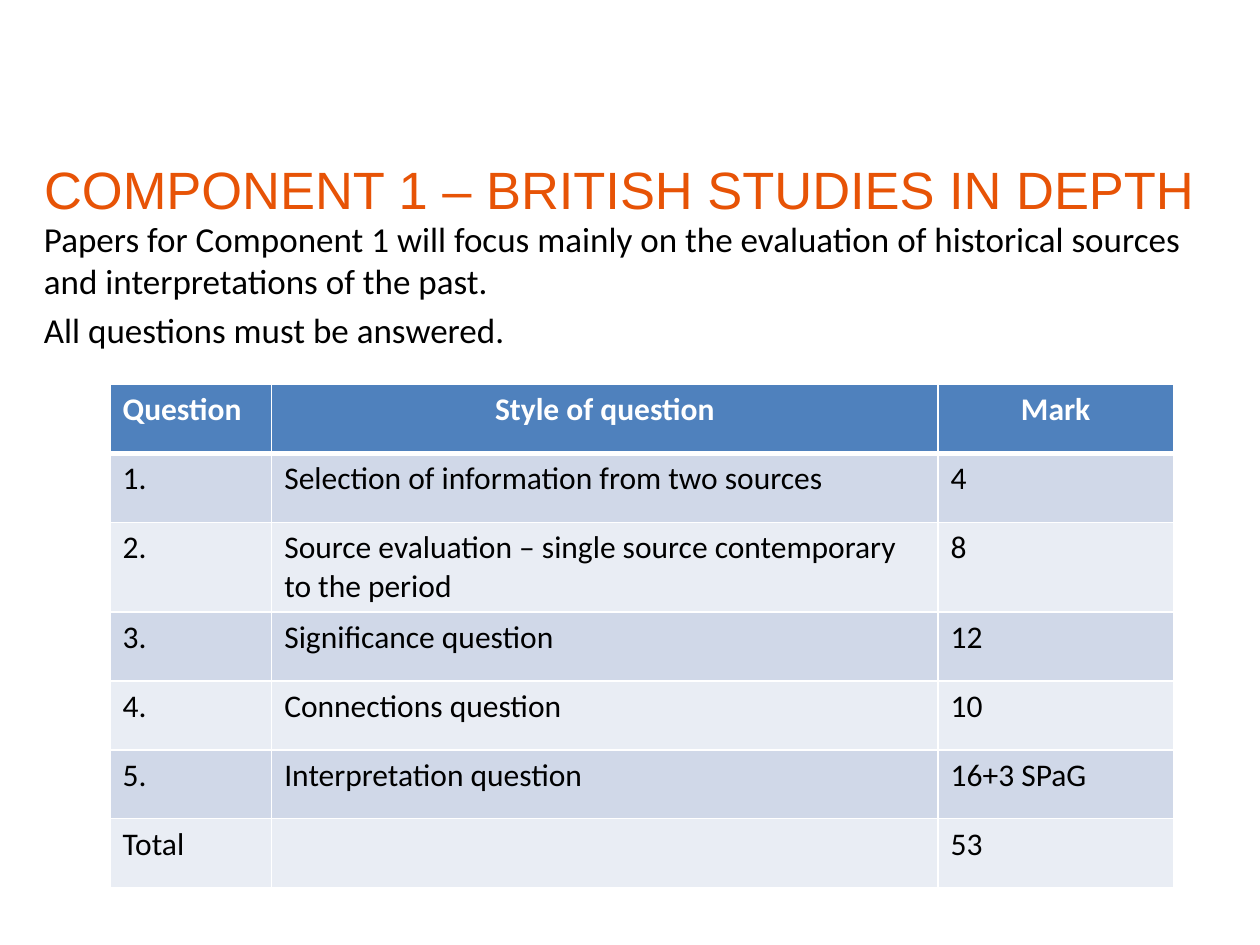
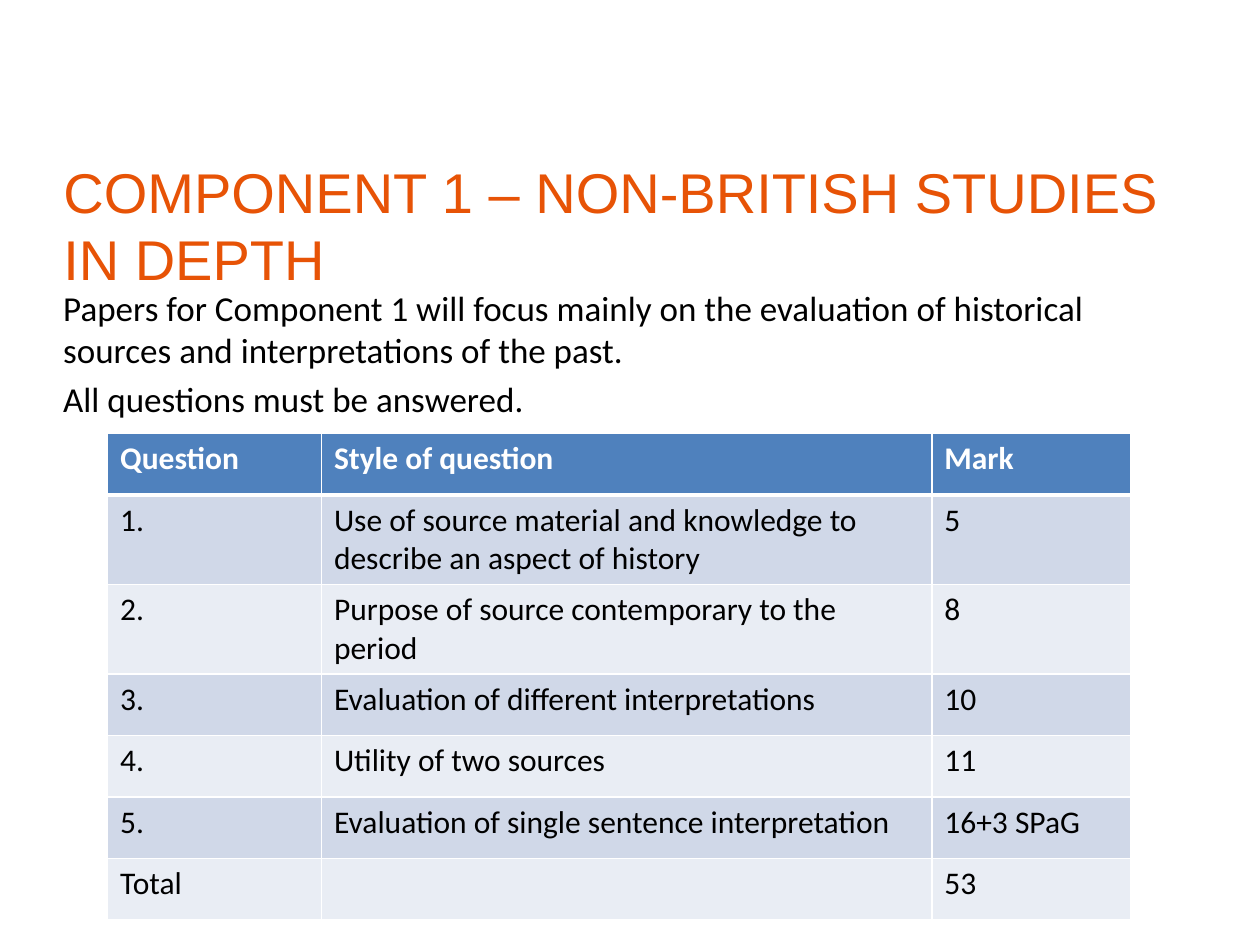
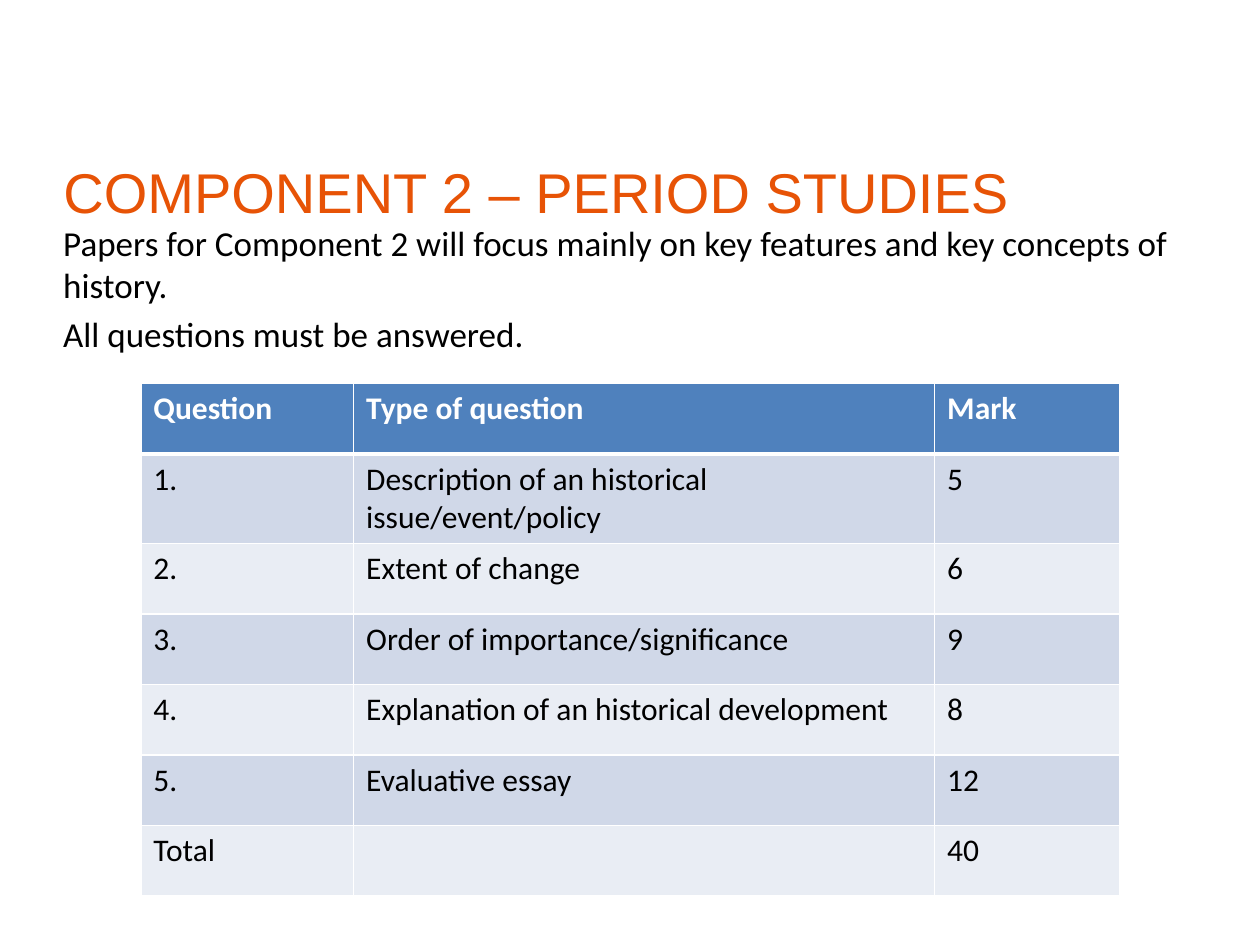
import pptx
import pptx.dml.color
import pptx.enum.text
import pptx.oxml
import pptx.oxml.ns
import pptx.util

Pt = pptx.util.Pt
ALIGN = pptx.enum.text.PP_ALIGN

COLOURS = {
    "title": "E75306",
    "text": "000000",
    "header": "4F81BD",
    "odd_row": "D0D8E8",
    "even_row": "E9EDF4",
    "white": "FFFFFF",
}
TITLE_FONT, TEXT_FONT = "Arial", "Calibri"
TITLE_TOP = 90
LINE_RATIO = 1.15
INTRO_HEIGHT = 78

# Content: wording, places and table measures of each slide
SOURCES_INTRO = [
    "Papers for Component 1 will focus mainly on the evaluation of "
    "historical sources and interpretations of the past.",
    "All questions must be answered.",
]
COMPONENTS = [
    {
        "title": "COMPONENT 1 – BRITISH STUDIES IN DEPTH",
        "title_size": 30, "title_lines": 1, "left": 18, "width": 673.2,
        "intro": SOURCES_INTRO,
        "table_at": (62.9, 219.8), "columns": (92.4, 380.8, 134.4),
        "row_height": 39.4, "header_align": (ALIGN.LEFT, ALIGN.CENTER, ALIGN.CENTER),
        "rows": [
            ("Question", "Style of question", "Mark"),
            ("1.", "Selection of information from two sources", "4"),
            ("2.", "Source evaluation – single source contemporary to the period", "8"),
            ("3.", "Significance question", "12"),
            ("4.", "Connections question", "10"),
            ("5.", "Interpretation question", "16+3 SPaG"),
            ("Total", "", "53"),
        ],
    },
    {
        "title": "COMPONENT 1 – NON-BRITISH STUDIES IN DEPTH",
        "title_size": 32, "title_lines": 2, "left": 29, "width": 663,
        "intro": SOURCES_INTRO,
        "table_at": (61.5, 247.8), "columns": (122.2, 348.8, 113.6),
        "row_height": 35.1, "header_align": (ALIGN.LEFT,) * 3,
        "rows": [
            ("Question", "Style of question", "Mark"),
            ("1.", "Use of source material and knowledge to describe an aspect of history", "5"),
            ("2.", "Purpose of source contemporary to the period", "8"),
            ("3.", "Evaluation of different interpretations", "10"),
            ("4.", "Utility of two sources", "11"),
            ("5.", "Evaluation of single sentence interpretation", "16+3 SPaG"),
            ("Total", "", "53"),
        ],
    },
    {
        "title": "COMPONENT 2 – PERIOD STUDIES",
        "title_size": 32, "title_lines": 1, "left": 29, "width": 663,
        "intro": [
            "Papers for Component 2 will focus mainly on key features and "
            "key concepts of history.",
            "All questions must be answered.",
        ],
        "table_at": (80.5, 219.2), "columns": (121.6, 332, 105.6),
        "row_height": 40.3, "header_align": (ALIGN.LEFT,) * 3,
        "rows": [
            ("Question", "Type of question", "Mark"),
            ("1.", "Description of an historical issue/event/policy", "5"),
            ("2.", "Extent of change", "6"),
            ("3.", "Order of importance/significance", "9"),
            ("4.", "Explanation of an historical development", "8"),
            ("5.", "Evaluative essay", "12"),
            ("Total", "", "40"),
        ],
    },
]


def colour(name):
    return pptx.dml.color.RGBColor.from_string(COLOURS[name])


def write(frame, *texts, size=18, font=TEXT_FONT, ink="text", bold=False,
          align=ALIGN.LEFT, gap=0):
    for index, text in enumerate(texts):
        paragraph = frame.add_paragraph() if index else frame.paragraphs[0]
        paragraph.text = text
        paragraph.alignment = align
        paragraph.space_before = Pt(gap if index else 0)
        paragraph.font.size = Pt(size)
        paragraph.font.name = font
        paragraph.font.bold = bold
        paragraph.font.color.rgb = colour(ink)


def place(shape, left, top, width, height):
    shape.left, shape.top, shape.width, shape.height = map(Pt, (left, top, width, height))
    frame = shape.text_frame
    frame.word_wrap = True
    frame.auto_size = pptx.enum.text.MSO_AUTO_SIZE.NONE
    frame.vertical_anchor = pptx.enum.text.MSO_ANCHOR.TOP
    frame.margin_top = frame.margin_bottom = 0
    return frame


def add_borders(cell, top, bottom):
    for side, width in (("L", 1), ("R", 1), ("T", top), ("B", bottom)):
        line = pptx.oxml.parse_xml(
            f'<a:ln{side} {pptx.oxml.ns.nsdecls("a")} w="{Pt(width)}"><a:solidFill>'
            f'<a:srgbClr val="{COLOURS["white"]}"/></a:solidFill></a:ln{side}>')
        cell._tc.get_or_add_tcPr().append(line)


def add_marks_table(slide, component):
    rows, columns = component["rows"], component["columns"]
    left, top = component["table_at"]
    height = component["row_height"]
    marks = slide.shapes.add_table(
        len(rows), len(columns), Pt(left), Pt(top),
        Pt(sum(columns)), Pt(height * len(rows))).table
    for column, width in zip(marks.columns, columns):
        column.width = Pt(width)
    for r, texts in enumerate(rows):
        marks.rows[r].height = Pt(height)
        header = r == 0
        fill = "header" if header else "odd_row" if r % 2 else "even_row"
        for c, text in enumerate(texts):
            cell = marks.cell(r, c)
            add_borders(cell, top=3 if r == 1 else 1, bottom=3 if header else 1)
            cell.fill.solid()
            cell.fill.fore_color.rgb = colour(fill)
            write(cell.text_frame, text, bold=header,
                  ink="white" if header else "text",
                  align=component["header_align"][c] if header else ALIGN.LEFT)


def add_component(deck, component):
    slide = deck.slides.add_slide(deck.slide_layouts[5])
    left, width, size = component["left"], component["width"], component["title_size"]
    title_height = size * LINE_RATIO * component["title_lines"]

    # Title, with the introduction directly below it
    title = place(slide.shapes.title, left, TITLE_TOP, width, title_height)
    write(title, component["title"], size=size, font=TITLE_FONT, ink="title")
    intro = place(slide.shapes.add_textbox(0, 0, 0, 0),
                  left, TITLE_TOP + title_height, width, INTRO_HEIGHT)
    write(intro, *component["intro"], size=20, gap=4)

    # Questions and marks
    add_marks_table(slide, component)


def main():
    deck = pptx.Presentation()
    deck.slide_width, deck.slide_height = Pt(720), Pt(540)
    for component in COMPONENTS:
        add_component(deck, component)
    deck.save("out.pptx")


if __name__ == "__main__":
    main()
